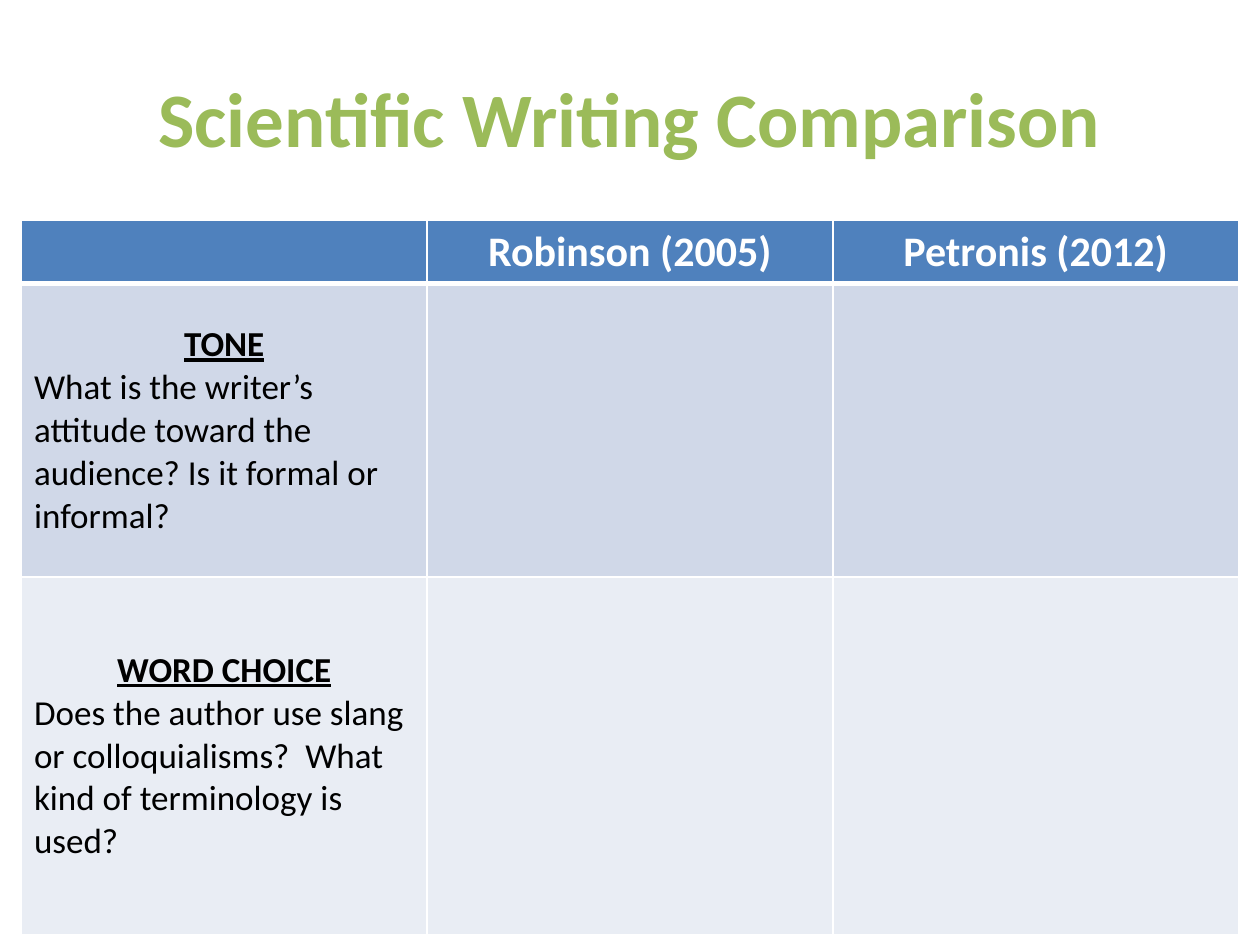
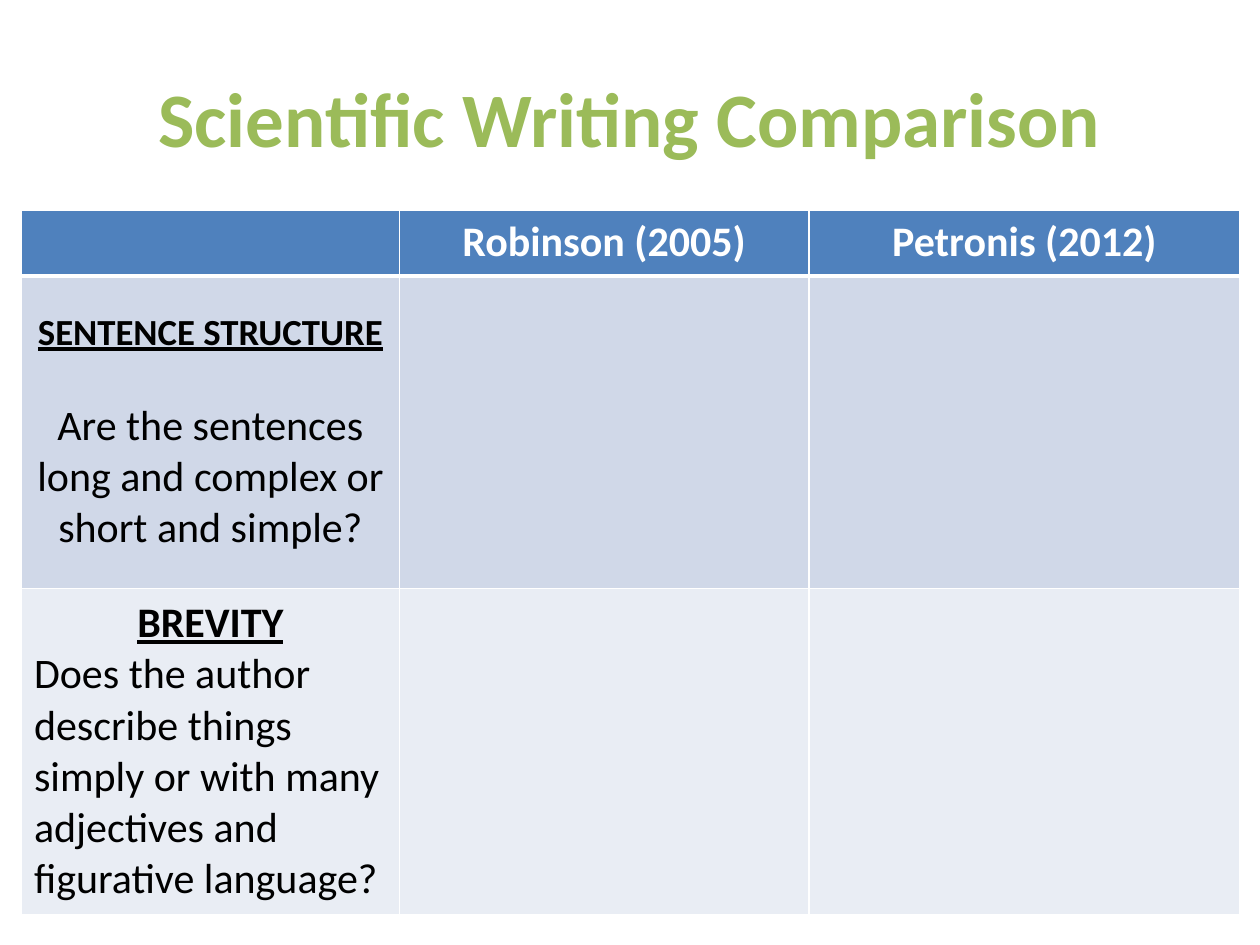
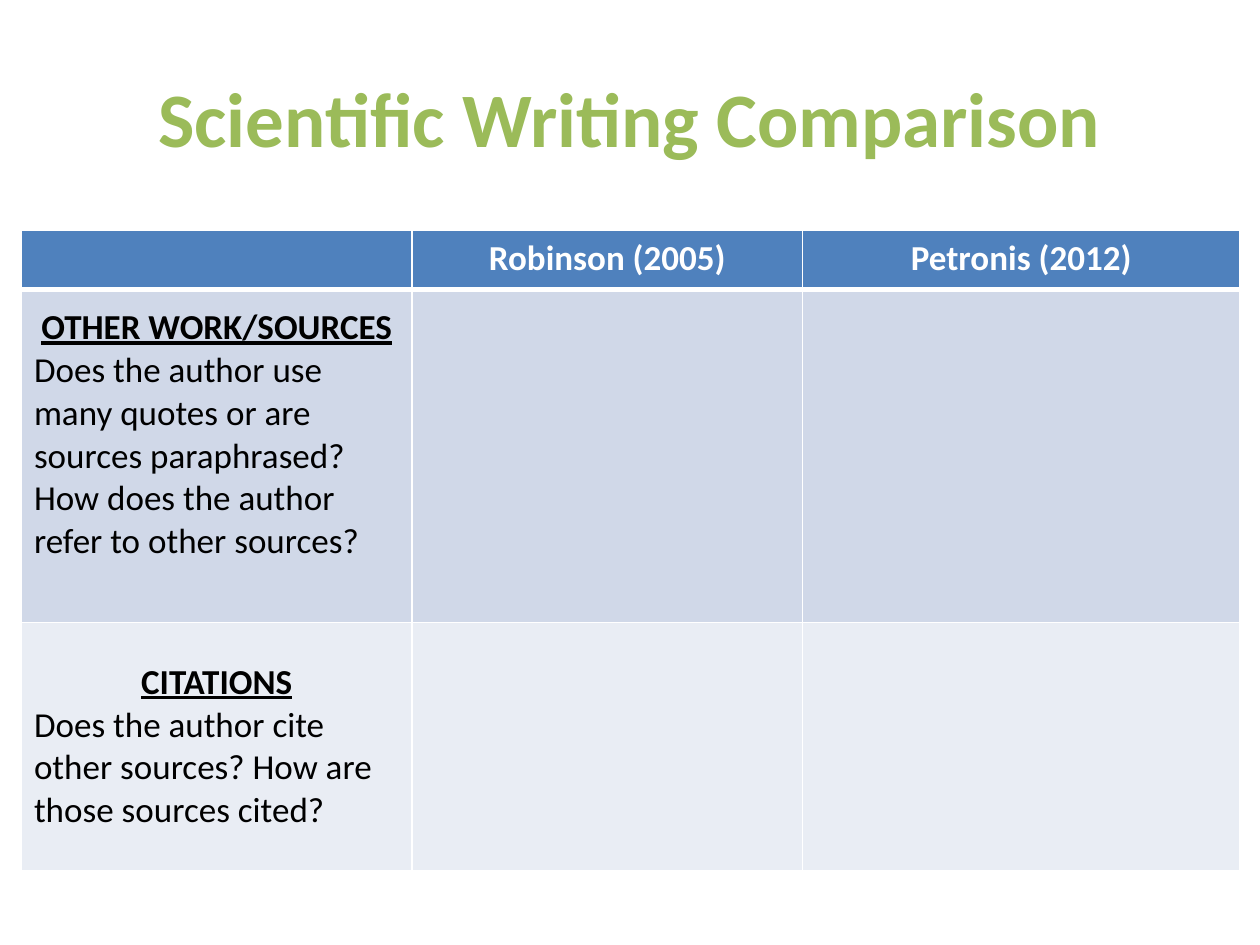
from lxml import etree
from pptx import Presentation
from pptx.dml.color import RGBColor
from pptx.enum.text import MSO_ANCHOR as Anchor, PP_ALIGN as Align
from pptx.oxml.ns import qn
from pptx.util import Inches, Pt

WHITE = RGBColor(0xFF, 0xFF, 0xFF)
BLACK = RGBColor(0, 0, 0)
GREEN = RGBColor(0x9B, 0xBB, 0x59)
BLUE = RGBColor(0x4F, 0x81, 0xBD)
BANDS = [RGBColor(0xD0, 0xD8, 0xE8), RGBColor(0xE9, 0xED, 0xF4)]
TITLE = "Scientific Writing Comparison"
PAPERS = ["Robinson (2005)", "Petronis (2012)"]
LEFT = 0.17

# Each topic: heading, its size, question, its size, alignment, gap, bottom margin
SLIDES = [
    dict(top=1.75, cols=[3.22, 3.22, 3.22], rows=[0.5, 2.33, 2.84], size=24, topics=[
        ("TONE", 20, "What is the writer’s attitude toward the audience? "
         "Is it formal or informal?", 20, Align.LEFT, 0, 0.05),
        ("WORD CHOICE", 20, "Does the author use slang or colloquialisms?  "
         "What kind of terminology is used?", 20, Align.LEFT, 0, 0.05)]),
    dict(top=1.67, cols=[3, 3.25, 3.42], rows=[0.52, 2.48, 2.59], size=24, topics=[
        ("SENTENCE STRUCTURE", 21, "Are the sentences long and complex "
         "or short and simple?", 24, Align.CENTER, 26, 0.05),
        ("BREVITY", 24, "Does the author describe things simply or with many "
         "adjectives and figurative language?", 24, Align.LEFT, 0, 0.05)]),
    dict(top=1.83, cols=[3.1, 3.1, 3.47], rows=[0.47, 2.64, 1.97], size=20, topics=[
        ("OTHER WORK/SOURCES", 20, "Does the author use many quotes or are sources "
         "paraphrased? How does the author refer to other sources?",
         20, Align.LEFT, 0, 0.39),
        ("CITATIONS", 20, "Does the author cite other sources? "
         "How are those sources cited?", 20, Align.LEFT, 0, 0.05)]),
]


def write(para, text, size, color, bold=True, align=Align.CENTER, line=False):
    para.text = text
    para.alignment = align
    font = para.runs[0].font
    font.name, font.size, font.bold, font.underline = "Calibri", Pt(size), bold, line
    font.color.rgb = color


def paint(cell, color, row):
    """Fill a cell and rule its sides in white, thick below the header."""
    props = cell._tc.get_or_add_tcPr()
    for side in "LRTB":
        thick = (row, side) in [(0, "B"), (1, "T")]
        rule = etree.SubElement(props, qn("a:ln" + side), w=str(Pt(3 if thick else 1)))
        fill = etree.SubElement(rule, qn("a:solidFill"))
        etree.SubElement(fill, qn("a:srgbClr"), val=str(WHITE))
    cell.fill.solid()
    cell.fill.fore_color.rgb = color


deck = Presentation()
deck.slide_width, deck.slide_height = Inches(10), Inches(7.5)

for page in SLIDES:
    slide = deck.slides.add_slide(deck.slide_layouts[6])
    title = slide.shapes.add_textbox(Inches(0.5), Inches(0.3), Inches(9), Inches(1.25))
    frame = title.text_frame
    frame.word_wrap = True
    frame.vertical_anchor = Anchor.MIDDLE
    write(frame.paragraphs[0], TITLE, 44, GREEN)

    cols, rows = page["cols"], page["rows"]
    grid = slide.shapes.add_table(
        len(rows), len(cols), Inches(LEFT), Inches(page["top"]),
        Inches(sum(cols)), Inches(sum(rows))).table
    for col, width in zip(grid.columns, cols):
        col.width = Inches(width)
    for row, height in enumerate(rows):
        grid.rows[row].height = Inches(height)
        for cell in grid.rows[row].cells:
            paint(cell, BANDS[row - 1] if row else BLUE, row)

    for col, paper in enumerate(PAPERS, 1):
        write(grid.cell(0, col).text_frame.paragraphs[0], paper, page["size"], WHITE)

    for row, topic in enumerate(page["topics"], 1):
        head, big, ask, size, align, gap, base = topic
        cell = grid.cell(row, 0)
        cell.vertical_anchor = Anchor.MIDDLE
        cell.margin_bottom = Inches(base)
        para = cell.text_frame.paragraphs[0]
        write(para, head, big, BLACK, line=True)
        para.space_after = Pt(gap)
        write(cell.text_frame.add_paragraph(), ask, size, BLACK, False, align)

deck.save("out.pptx")
